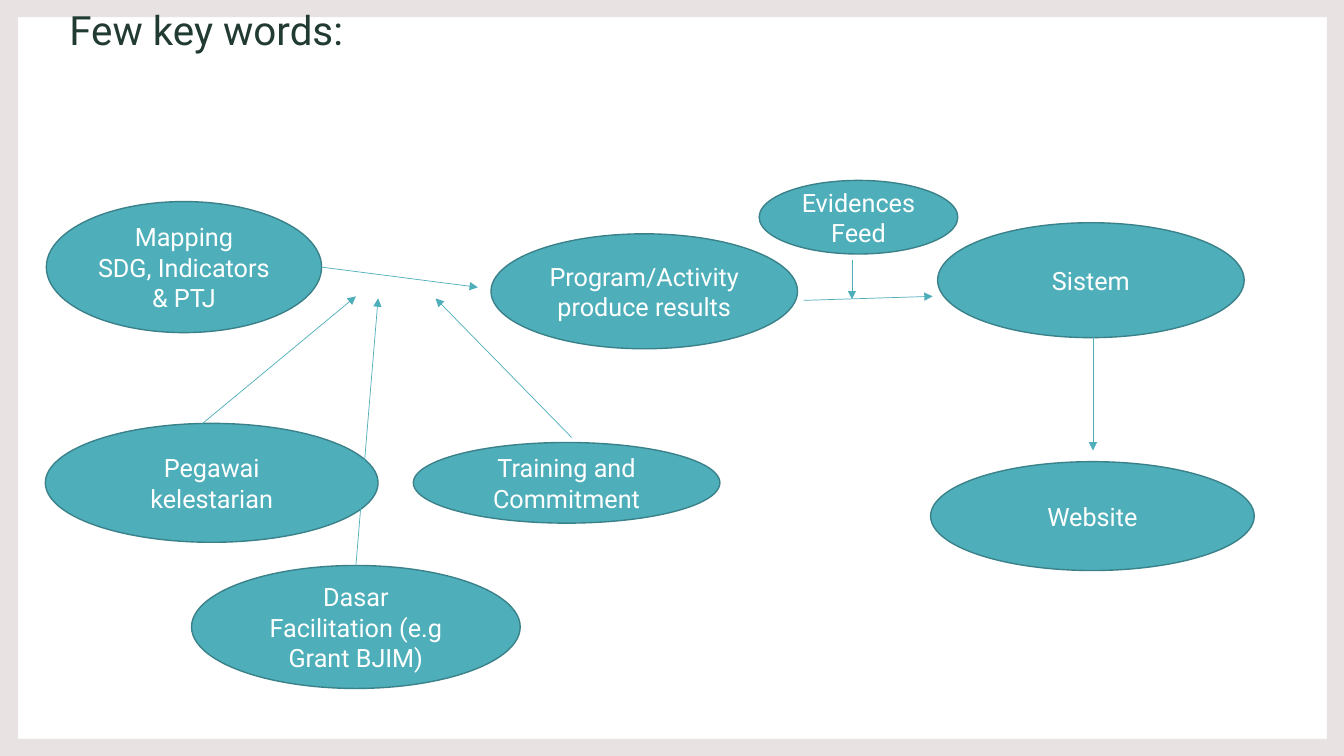
from lxml import etree
from pptx import Presentation
from pptx.dml.color import RGBColor
from pptx.enum.shapes import MSO_CONNECTOR, MSO_SHAPE
from pptx.enum.text import MSO_ANCHOR, PP_ALIGN
from pptx.oxml.ns import qn
from pptx.util import Inches, Pt

ELLIPSE = MSO_SHAPE.OVAL
STRAIGHT = MSO_CONNECTOR.STRAIGHT
MIDDLE, TOP = MSO_ANCHOR.MIDDLE, MSO_ANCHOR.TOP
CENTER, LEFT = PP_ALIGN.CENTER, PP_ALIGN.LEFT

WIDTH, HEIGHT = 13.33, 7.5
FONT = "Roboto"
TEAL, TEAL_DARK = "4EAFBA", "3A818A"
FRAME, INK, WHITE = "E8E3E2", "213B33", "FFFFFF"

IDEAS = {
    "mapping": ((0.46, 2, 2.73, 1.3), ["Mapping", "SDG, Indicators & PTJ"]),
    "officers": ((0.45, 4.2, 3.3, 1.18), ["Pegawai kelestarian"]),
    "system": ((9.3, 2.21, 3.04, 1.14), ["Sistem"]),
    "program": ((4.87, 2.32, 3.04, 1.14), ["Program/Activity produce results"]),
    "website": ((9.23, 4.58, 3.21, 1.08), ["Website"]),
    "policy": ((1.9, 5.61, 3.26, 1.22), ["Dasar", "Facilitation (e.g Grant BJIM)"]),
    "evidence": ((7.53, 1.79, 1.97, 0.73), ["Evidences", "Feed"]),
    "training": ((4.1, 4.39, 3.04, 0.8), ["Training and Commitment"]),
}

ARROWS = [
    ((3.19, 2.65), (4.74, 2.85), None),
    ((2.01, 4.2), (3.53, 2.94), None),
    ((3.53, 5.61), (3.75, 2.96), "policy"),
    ((5.67, 4.34), (4.32, 2.96), None),
    ((7.97, 2.98), (9.25, 2.94), None),
    ((8.45, 2.58), (8.45, 2.97), None),
    ((10.84, 3.34), (10.84, 4.47), None),
]


def color(value):
    return RGBColor.from_string(value)


def inches(values):
    return [Inches(v) for v in values]


def write(tf, lines, size, ink, align, anchor):
    tf.word_wrap = True
    tf.vertical_anchor = anchor
    for i, line in enumerate(lines):
        p = tf.paragraphs[0] if i == 0 else tf.add_paragraph()
        p.alignment = align
        r = p.add_run()
        r.text = line
        for name, value in {"name": FONT, "size": Pt(size)}.items():
            setattr(r.font, name, value)
        r.font.color.rgb = color(ink)


def add_frame(s, left, top, right, bottom):
    corners = [(left, top), (left, bottom), (right, bottom), (right, top)]
    inner = [inches(c) for c in corners]
    outer = [inches(c) for c in [(0, 0), (WIDTH, 0), (WIDTH, HEIGHT), (0, HEIGHT)]]
    builder = s.shapes.build_freeform(*inner[0])
    builder.add_line_segments(inner[1:], close=True)
    builder.move_to(*outer[0])
    builder.add_line_segments(outer[1:], close=True)
    sp = builder.convert_to_shape()
    sp.shadow.inherit = False
    sp.fill.solid()
    sp.fill.fore_color.rgb = color(FRAME)
    sp.line.fill.background()


def add_title(s, box, text):
    tf = s.shapes.add_textbox(*inches(box)).text_frame
    tf.margin_top = tf.margin_bottom = 0
    write(tf, [text], 28.8, INK, LEFT, TOP)
    tf.paragraphs[0].line_spacing = 1.1


def add_idea(s, box, lines):
    sp = s.shapes.add_shape(ELLIPSE, *inches(box))
    sp.shadow.inherit = False
    sp.fill.solid()
    sp.fill.fore_color.rgb = color(TEAL)
    sp.line.color.rgb = color(TEAL_DARK)
    sp.line.width = Pt(1)
    write(sp.text_frame, lines, 18, WHITE, CENTER, MIDDLE)
    return sp


def add_arrow(s, start, end, source=None):
    arrow = s.shapes.add_connector(STRAIGHT, *inches(start + end))
    if source is not None:
        arrow.begin_connect(source, 0)
    arrow.line.color.rgb = color(TEAL)
    arrow.line.width = Pt(0.5)
    props = arrow._element.spPr
    etree.SubElement(props.find(qn("a:ln")), qn("a:tailEnd"), type="triangle")
    etree.SubElement(props, qn("a:effectLst"))


def build_slide(prs):
    s = prs.slides.add_slide(prs.slide_layouts[6])
    add_frame(s, 0.18, 0.17, 13.16, 7.33)
    add_title(s, (0.59, 0, 12.14, 0.55), "Few key words:")
    ideas = {name: add_idea(s, box, lines) for name, (box, lines) in IDEAS.items()}
    for start, end, source in ARROWS:
        add_arrow(s, start, end, ideas.get(source))


def main():
    prs = Presentation()
    prs.slide_width, prs.slide_height = inches((WIDTH, HEIGHT))
    build_slide(prs)
    prs.save("out.pptx")


if __name__ == "__main__":
    main()
